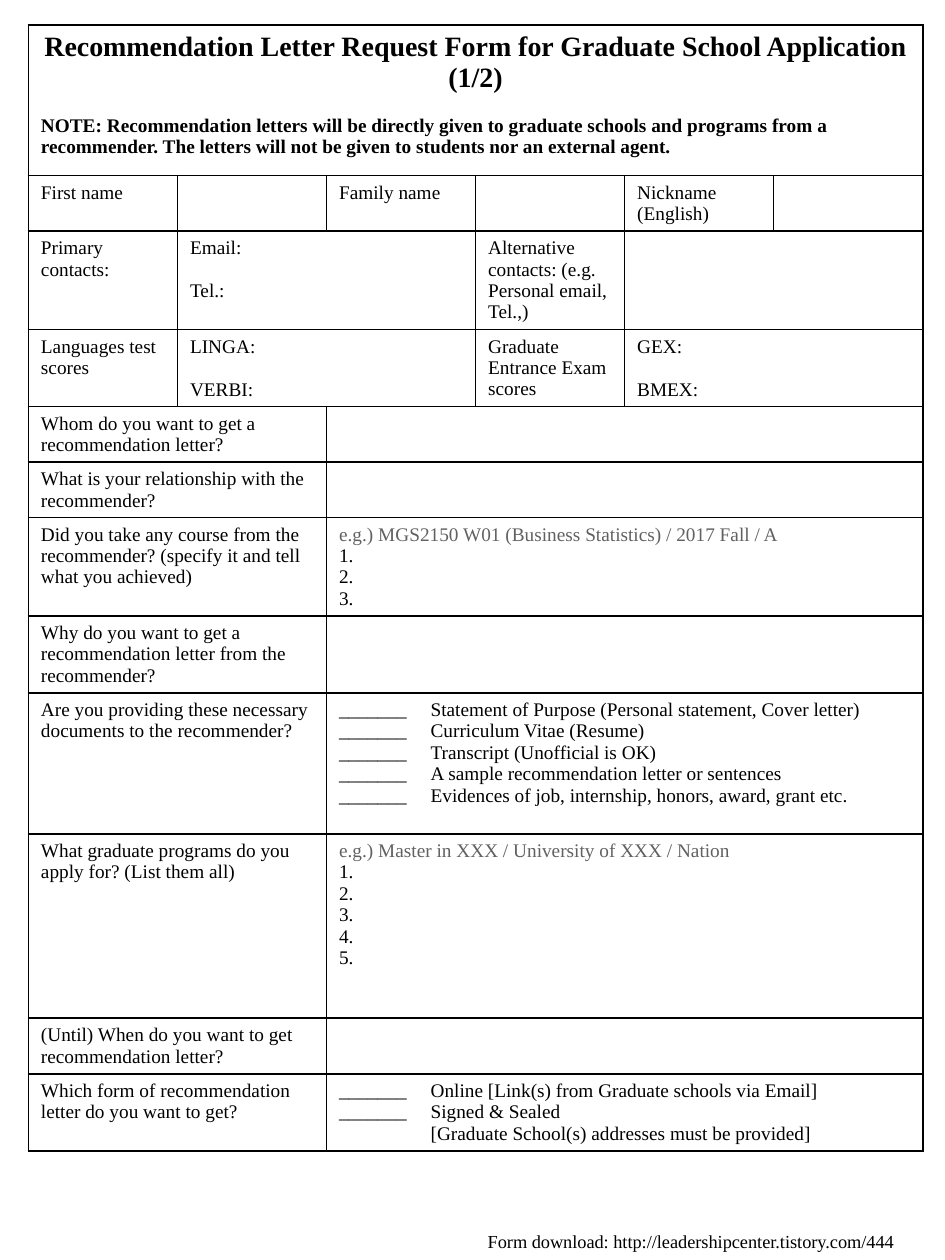
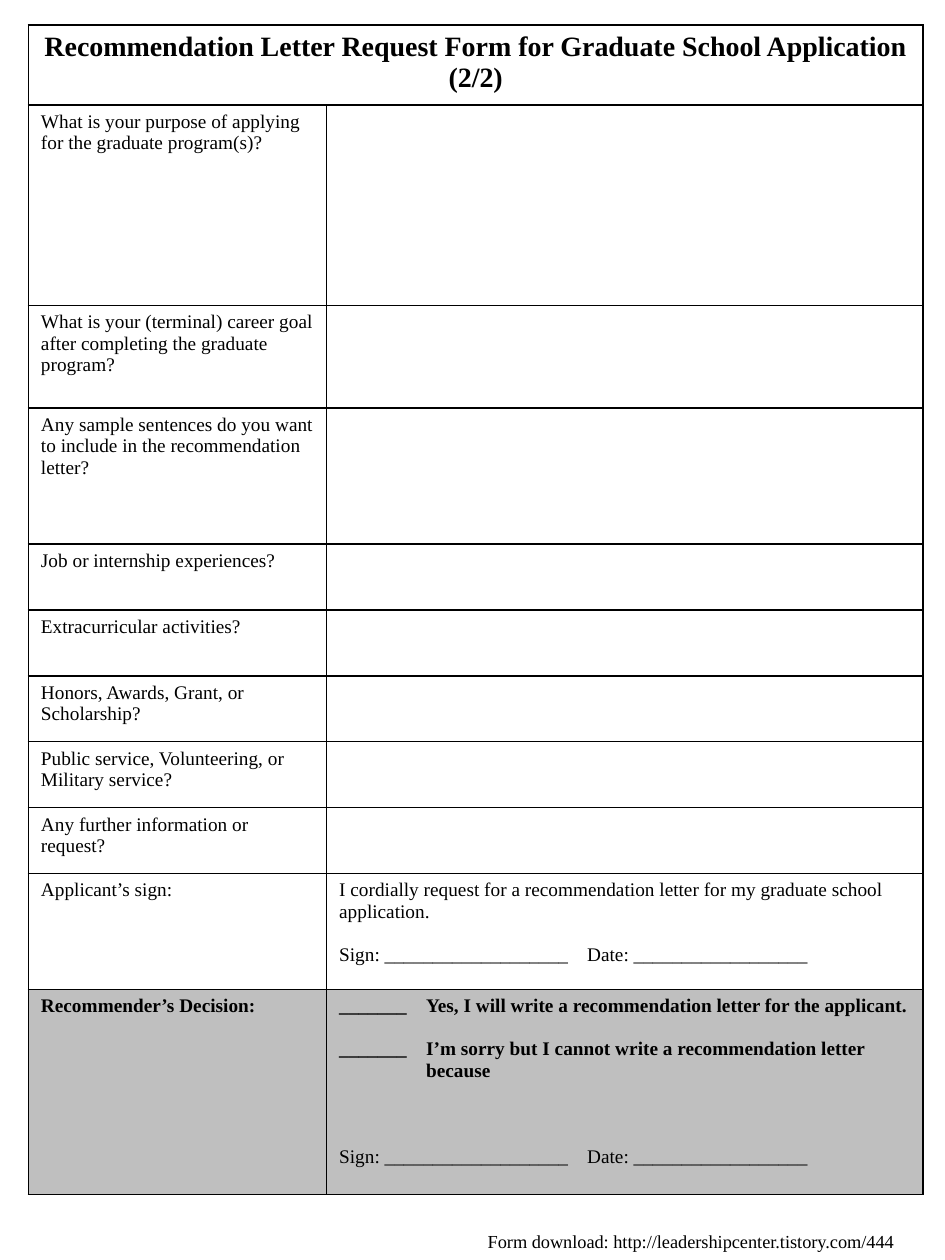
from dataclasses import dataclass

from lxml.etree import SubElement
from pptx import Presentation
from pptx.dml.color import RGBColor as Rgb
from pptx.enum.text import MSO_AUTO_SIZE as Fit, PP_ALIGN as Align
from pptx.oxml.ns import qn
from pptx.slide import Slide
from pptx.table import Table, _Cell
from pptx.text.text import TextFrame, _Paragraph
from pptx.util import Pt

FONT = "Times New Roman"
HEX = {"ink": "000000", "hint": "616161", "shade": "BFBFBF"}
TITLE = "Recommendation Letter Request Form for Graduate School Application"
LEFT, TOP, WIDTH = 16.2, 14.4, 511.2
GAP = 12.3  # one line of body text
CHECK, VOTE, DATE = 52.3, 49.7, 141.7  # tab stops
BLANK = "_" * 7
SIGN = f"Sign: {'_' * 19}\tDate: {'_' * 18}"


@dataclass
class Line:
    text: str
    size: float = 11
    bold: bool = False
    color: str = "ink"
    tab: float = 0
    before: float = 0
    center: bool = False


@dataclass
class Cell:
    lines: list[Line]
    span: int = 1
    fill: str = ""


@dataclass
class Row:
    height: float
    cells: list[Cell]


def plain(text: str, span: int = 1) -> Cell:
    return Cell([Line(text)] if text else [], span)


def pair(top: str, low: str) -> Cell:
    """Two labels with an empty line between them."""
    return Cell([Line(top), Line(low, before=GAP)], 2)


def head(page: int, span: int) -> Cell:
    return Cell([Line(f"{TITLE} ({page}/2)", 16, True, center=True)], span)


def listing(hint: str, count: int) -> Cell:
    """A grey example above numbered blanks."""
    nums = [Line(f"{n}.") for n in range(1, count + 1)]
    return Cell([Line(hint, color="hint")] + nums, 4)


def checks(*items: str) -> Cell:
    return Cell([Line(item, tab=CHECK) for item in items], 4)


def ask(height: float, text: str, reply: Cell) -> Row:
    """A question two grid columns wide, with its reply."""
    return Row(height, [plain(text, 2), reply])


def write(para: _Paragraph, line: Line) -> None:
    if line.tab:
        tabs = SubElement(para._p.get_or_add_pPr(), qn("a:tabLst"))
        SubElement(tabs, qn("a:tab"), pos=str(Pt(line.tab)), algn="l")
    if line.before:
        para.space_before = Pt(line.before)
    para.alignment = Align.CENTER if line.center else Align.LEFT
    for num, part in enumerate(line.text.split("\n")):
        if num:
            para.add_line_break()
        run = para.add_run()
        run.text = part
        font = run.font
        font.name, font.size, font.bold = FONT, Pt(line.size), line.bold
        font.color.rgb = Rgb.from_string(HEX[line.color])


def fill_text(frame: TextFrame, lines: list[Line]) -> None:
    for num, line in enumerate(lines):
        write(frame.add_paragraph() if num else frame.paragraphs[0], line)


def border(cell: _Cell) -> None:
    props = cell._tc.get_or_add_tcPr()
    for side in ("lnL", "lnR", "lnT", "lnB"):
        edge = SubElement(props, qn(f"a:{side}"), w=str(Pt(1)))
        paint = SubElement(edge, qn("a:solidFill"))
        SubElement(paint, qn("a:srgbClr"), val=HEX["ink"])


def add_row(table: Table, num: int, row: Row) -> None:
    table.rows[num].height = Pt(row.height)
    col = 0
    for item in row.cells:
        last = col + item.span - 1
        for pos in range(col, last + 1):
            cell = table.cell(num, pos)
            border(cell)
            if item.fill:
                cell.fill.solid()
                cell.fill.fore_color.rgb = Rgb.from_string(HEX[item.fill])
            else:
                cell.fill.background()
        cell = table.cell(num, col)
        if item.span > 1:
            cell.merge(table.cell(num, last))
        fill_text(cell.text_frame, item.lines)
        col = last + 1


def add_form(slide: Slide, widths: list[float], rows: list[Row]) -> None:
    high = sum(row.height for row in rows)
    table = slide.shapes.add_table(
        len(rows), len(widths), Pt(LEFT), Pt(TOP), Pt(WIDTH), Pt(high)
    ).table
    table.first_row = table.horz_banding = False
    for col, width in zip(table.columns, widths):
        col.width = Pt(width)
    for num, row in enumerate(rows):
        add_row(table, num, row)


def add_foot(slide: Slide) -> None:
    box = slide.shapes.add_textbox(Pt(271.6), Pt(699.4), Pt(251.3), Pt(20))
    frame = box.text_frame
    frame.word_wrap = False
    frame.auto_size = Fit.SHAPE_TO_FIT_TEXT
    link = "Form download: http://leadershipcenter.tistory.com/444"
    fill_text(frame, [Line(link, 10.5)])


def first_rows() -> list[Row]:
    top = head(1, 6)
    top.lines.append(Line(
        "NOTE: Recommendation letters will be directly given to graduate "
        "schools and programs from a recommender. The letters will not be "
        "given to students nor an external agent.", bold=True, before=GAP))
    names = ["First name", "", "Family name", "", "Nickname (English)", ""]
    void = plain("", 4)
    return [
        Row(86, [top]),
        Row(31.7, [plain(name) for name in names]),
        Row(56.2, [
            plain("Primary contacts:"), pair("Email:", "Tel.:"),
            plain("Alternative contacts: (e.g. Personal email, Tel.,)"),
            plain("", 2)]),
        Row(44, [
            plain("Languages test scores"), pair("LINGA:", "VERBI:"),
            plain("Graduate Entrance Exam scores"), pair("GEX:", "BMEX:")]),
        ask(31.7, "Whom do you want to get a recommendation letter?", void),
        ask(31.7, "What is your relationship with the recommender?", void),
        ask(56.2, "Did you take any course from the recommender? "
            "(specify it and tell what you achieved)",
            listing("e.g.) MGS2150 W01 (Business Statistics) / 2017 Fall / A",
                    3)),
        ask(44, "Why do you want to get a recommendation letter from the "
            "recommender?", void),
        ask(80.6, "Are you providing these necessary documents to the "
            "recommender?", checks(
                f"{BLANK}\tStatement of Purpose "
                "(Personal statement, Cover letter)",
                f"{BLANK}\tCurriculum Vitae (Resume)",
                f"{BLANK}\tTranscript (Unofficial is OK)",
                f"{BLANK}\tA sample recommendation letter or sentences",
                f"{BLANK}\tEvidences of job, internship, honors, award, "
                "grant etc.")),
        ask(105.2, "What graduate programs do you apply for? (List them all)",
            listing("e.g.) Master in XXX / University of XXX / Nation", 5)),
        ask(31.9, "(Until) When do you want to get recommendation letter?",
            void),
        ask(44, "Which form of recommendation letter do you want to get?",
            checks(
                f"{BLANK}\tOnline [Link(s) from Graduate schools via Email]",
                f"{BLANK}\tSigned & Sealed",
                "\t[Graduate School(s) addresses must be provided]")),
    ]


def second_rows() -> list[Row]:
    asks = [
        (114.5, "What is your purpose of applying for the graduate "
         "program(s)?"),
        (58.6, "What is your (terminal) career goal after completing the "
         "graduate program?"),
        (77.8, "Any sample sentences do you want to include in the "
         "recommendation letter?"),
        (37.65, "Job or internship experiences?"),
        (37.65, "Extracurricular activities?"),
        (37.65, "Honors, Awards, Grant, or Scholarship?"),
        (37.65, "Public service, Volunteering, or Military service?"),
        (37.65, "Any further information or request?"),
    ]
    plea = Cell([
        Line("I cordially request for a recommendation letter for my "
             "graduate school application."),
        Line(SIGN, tab=DATE, before=GAP)])
    vote = Cell([
        Line(f"{BLANK}\tYes, I will write a recommendation letter for the "
             "applicant.", bold=True, tab=VOTE),
        Line(f"{BLANK}\tI’m sorry but I cannot write a recommendation letter"
             "\n\tbecause", bold=True, tab=VOTE, before=GAP),
        Line(SIGN, tab=DATE, before=3 * GAP)], fill="shade")
    label = Cell([Line("Recommender’s Decision:", bold=True)], fill="shade")
    return [
        Row(44, [head(2, 2)]),
        *(Row(high, [plain(text), plain("")]) for high, text in asks),
        Row(66.3, [plain("Applicant’s sign:"), plea]),
        Row(117.1, [label, vote]),
    ]


def main() -> None:
    deck = Presentation()
    deck.slide_width, deck.slide_height = Pt(540), Pt(720)
    unit = WIDTH / 6
    forms = [([unit] * 6, first_rows()),
             ([2 * unit, 4 * unit], second_rows())]
    for widths, rows in forms:
        slide = deck.slides.add_slide(deck.slide_layouts[6])
        add_form(slide, widths, rows)
        add_foot(slide)
    deck.save("out.pptx")


if __name__ == "__main__":
    main()
